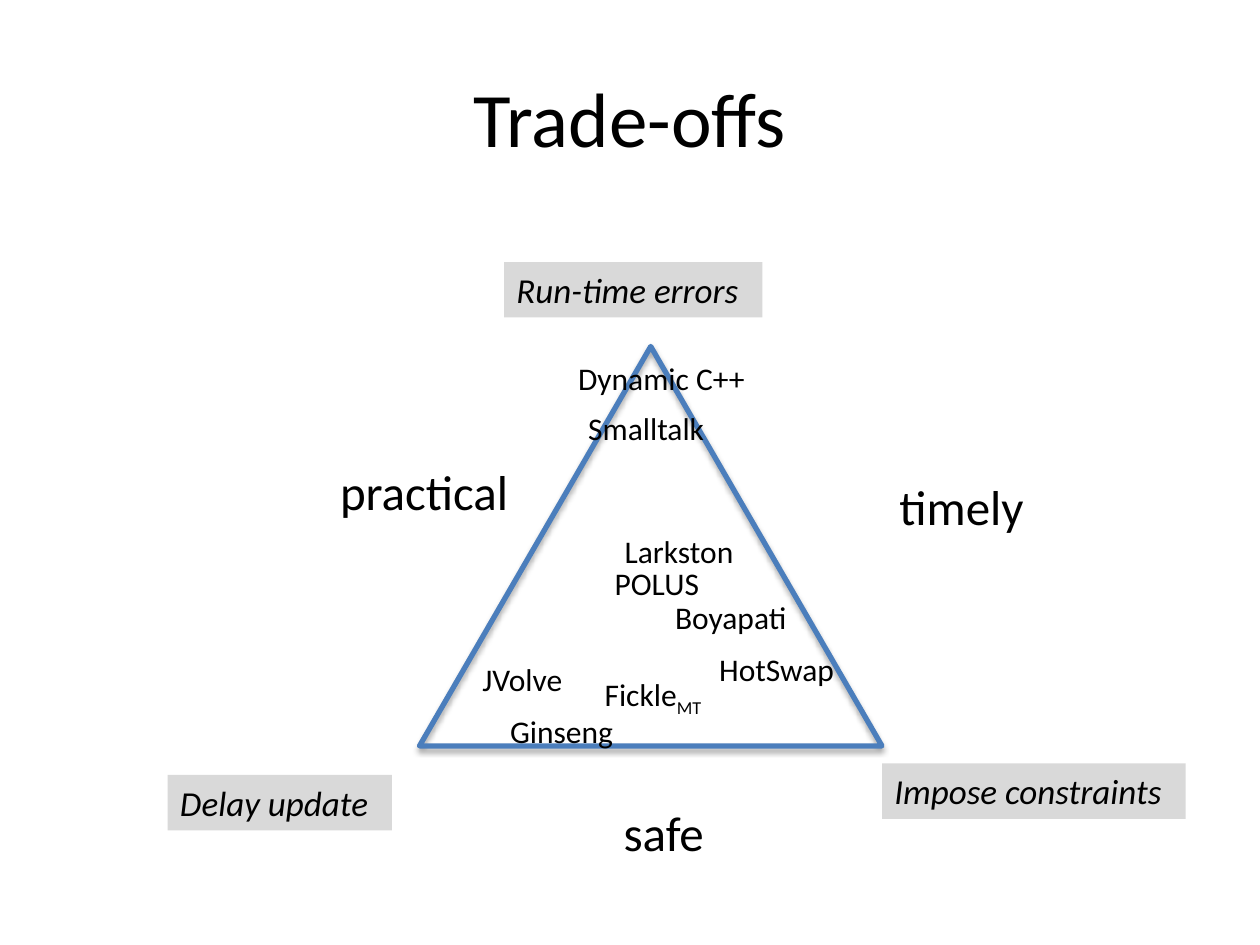
from lxml import etree
from pptx import Presentation
from pptx.dml.color import RGBColor
from pptx.enum.shapes import MSO_SHAPE
from pptx.enum.text import MSO_ANCHOR, MSO_AUTO_SIZE, PP_ALIGN
from pptx.oxml.ns import qn
from pptx.util import Inches, Pt

TRIANGLE = MSO_SHAPE.ISOSCELES_TRIANGLE
MIDDLE = MSO_ANCHOR.MIDDLE
FIT_SHAPE = MSO_AUTO_SIZE.SHAPE_TO_FIT_TEXT
CENTER = PP_ALIGN.CENTER

FONT = "Calibri"
BLACK, BLUE, GRAY = "000000", "4B7EBC", "D9D9D9"

# Left, top and width of each label, in inches from the diagram's corner
GOALS = [
    ("practical", 1.27, 1.53, 1.55),
    ("safe", 3.52, 4.24, 0.85),
    ("timely", 5.71, 1.65, 1.2),
]
SYSTEMS = [
    ("Fickle", 3.37, 3.23, 1.01),
    ("HotSwap", 4.28, 3.03, 1.12),
    ("Smalltalk", 3.24, 1.12, 1.13),
    ("Ginseng", 2.62, 3.52, 1.03),
    ("Boyapati", 3.93, 2.62, 1.1),
    ("Dynamic C++", 3.16, 0.72, 1.54),
    ("JVolve", 2.4, 3.11, 0.84),
    ("Larkston", 3.53, 2.09, 1.26),
    ("POLUS", 3.45, 2.35, 0.88),
]
COSTS = [
    ("Delay update", 0, 4.07, 1.78),
    ("Impose constraints", 5.67, 3.98, 2.41),
    ("Run-time errors", 2.67, 0, 2.05),
]


def color(value):
    return RGBColor.from_string(value)


def format_run(run, size, italic=False):
    run.font.name = FONT
    run.font.size = Pt(size)
    run.font.italic = italic
    run.font.color.rgb = color(BLACK)


def add_title(slide, left, top, width, height):
    title = slide.shapes.add_textbox(left, top, width, height)
    text_frame = title.text_frame
    text_frame.word_wrap = True
    text_frame.vertical_anchor = MIDDLE
    text_frame.text = "Trade-offs"
    paragraph = text_frame.paragraphs[0]
    paragraph.alignment = CENTER
    format_run(paragraph.runs[0], 44)


def add_label(slide, text, left, top, width, height, size, fill=None):
    """Add a one-line label, italic when it has a fill."""
    label = slide.shapes.add_textbox(left, top, width, height)
    text_frame = label.text_frame
    text_frame.word_wrap = False
    text_frame.auto_size = FIT_SHAPE
    text_frame.text = text
    paragraph = text_frame.paragraphs[0]
    format_run(paragraph.runs[0], size, italic=fill is not None)
    if fill:
        label.fill.solid()
        label.fill.fore_color.rgb = color(fill)
    return paragraph


def add_subscript(paragraph, text, size):
    run = paragraph.add_run()
    run.text = text
    format_run(run, size)
    run.font._element.set("baseline", "-25000")


def add_soft_shadow(shape):
    shape.shadow.inherit = False
    effects = shape._element.spPr.find(qn("a:effectLst"))
    shadow = etree.SubElement(
        effects, qn("a:outerShdw"), blurRad=str(Pt(3.1)), dist=str(Pt(1.8)),
        dir="5400000", rotWithShape="0")
    shade = etree.SubElement(shadow, qn("a:srgbClr"), val=BLACK)
    etree.SubElement(shade, qn("a:alpha"), val="35000")


def add_triangle(slide, left, top, width, height):
    triangle = slide.shapes.add_shape(TRIANGLE, left, top, width, height)
    triangle.fill.background()
    triangle.line.color.rgb = color(BLUE)
    triangle.line.width = Pt(3)
    add_soft_shadow(triangle)


def add_diagram(slide, left, top):
    add_triangle(slide, left + Inches(2), top + Inches(0.67),
                 Inches(3.67), Inches(3.17))
    groups = [(GOALS, 0.57, 28, None), (SYSTEMS, 0.4, 18, None),
              (COSTS, 0.44, 20, GRAY)]
    for labels, height, size, fill in groups:
        for text, x, y, width in labels:
            paragraph = add_label(
                slide, text, left + Inches(x), top + Inches(y),
                Inches(width), Inches(height), size, fill)
            if text == "Fickle":
                add_subscript(paragraph, "MT", size)


def main():
    presentation = Presentation()
    presentation.slide_width = Inches(10)
    presentation.slide_height = Inches(7.5)
    slide = presentation.slides.add_slide(presentation.slide_layouts[6])
    add_title(slide, Inches(0.5), Inches(0.3), Inches(9), Inches(1.25))
    add_diagram(slide, Inches(1.33), Inches(2.08))
    presentation.save("out.pptx")


if __name__ == "__main__":
    main()
